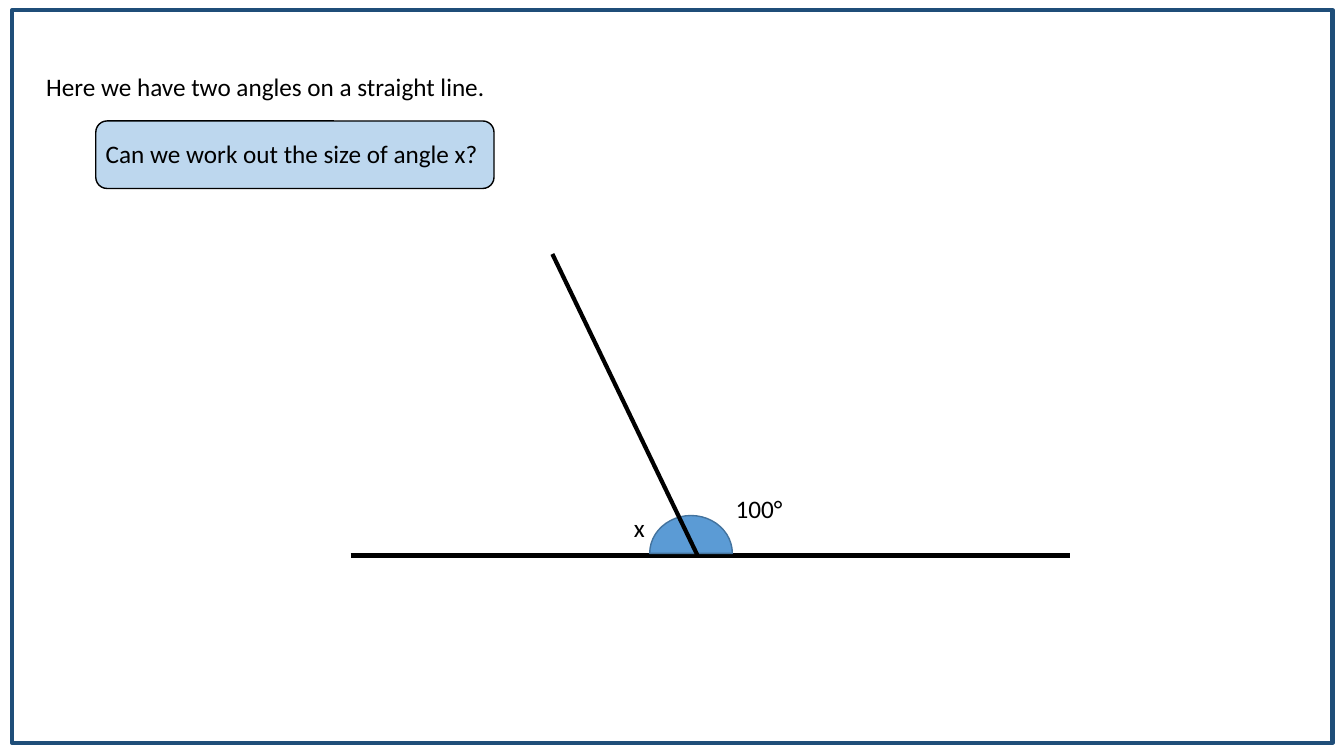
from dataclasses import dataclass

from lxml import etree
from pptx import Presentation
from pptx.dml.color import RGBColor
from pptx.enum.shapes import MSO_CONNECTOR, MSO_SHAPE
from pptx.oxml.ns import qn
from pptx.slide import Slide
from pptx.util import Inches, Pt

RECTANGLE = MSO_SHAPE.RECTANGLE
ROUNDED = MSO_SHAPE.ROUNDED_RECTANGLE
PIE = MSO_SHAPE.PIE
STRAIGHT = MSO_CONNECTOR.STRAIGHT

WIDTH, HEIGHT = Inches(13.33), Inches(7.5)
FONT = "Calibri"
TEXT_SIZE = Pt(18)
TEXT_HEIGHT = 5.33
COLOURS = {
    "ink": "000000",
    "frame": "1F4E79",
    "prompt": "BDD7EE",
    "angle": "5B9BD5",
    "angle_edge": "43739E",
}


# All positions and lengths are percentages of the slide's width or height
@dataclass(frozen=True)
class Panel:
    kind: MSO_SHAPE
    left: float
    top: float
    width: float
    height: float
    line: str
    line_points: float
    fill: str | None = None
    rotation: float = 0
    adjustments: tuple[float, ...] = ()


@dataclass(frozen=True)
class Label:
    text: str
    left: float
    top: float
    width: float
    wrap: bool = False


@dataclass(frozen=True)
class Segment:
    start: tuple[float, float]
    end: tuple[float, float]


def across(percent: float) -> int:
    return round(WIDTH * percent / 100)


def down(percent: float) -> int:
    return round(HEIGHT * percent / 100)


def colour(name: str) -> RGBColor:
    return RGBColor.from_string(COLOURS[name])


def draw_panel(slide: Slide, panel: Panel) -> None:
    shape = slide.shapes.add_shape(
        panel.kind, across(panel.left), down(panel.top),
        across(panel.width), down(panel.height))
    shape.shadow.inherit = False
    shape.rotation = panel.rotation
    for index, value in enumerate(panel.adjustments):
        shape.adjustments[index] = value
    if panel.fill:
        shape.fill.solid()
        shape.fill.fore_color.rgb = colour(panel.fill)
    else:
        shape.fill.background()
    shape.line.color.rgb = colour(panel.line)
    shape.line.width = Pt(panel.line_points)


def draw_label(slide: Slide, label: Label) -> None:
    box = slide.shapes.add_textbox(
        across(label.left), down(label.top),
        across(label.width), down(TEXT_HEIGHT))
    box.text_frame.word_wrap = label.wrap
    paragraph = box.text_frame.paragraphs[0]
    paragraph.text = label.text
    paragraph.font.name = FONT
    paragraph.font.size = TEXT_SIZE
    paragraph.font.color.rgb = colour("ink")


def draw_segment(slide: Slide, segment: Segment) -> None:
    (start_x, start_y), (end_x, end_y) = segment.start, segment.end
    connector = slide.shapes.add_connector(
        STRAIGHT, across(start_x), down(start_y), across(end_x), down(end_y))
    connector.line.color.rgb = colour("ink")
    connector.line.width = Pt(3)
    etree.SubElement(connector._element.spPr, qn("a:effectLst"))


BASELINE = 73.47
FRAME = Panel(RECTANGLE, 0.9, 1.33, 98.25, 96.93, "frame", 3)
# A half disc from 90 to 270 degrees, turned to sit on the baseline
ANGLE = Panel(PIE, 48.6, 67.73, 5.63, 10.93, "angle_edge", 1, "angle",
              rotation=90, adjustments=(54, 162))
PROMPT = Panel(ROUNDED, 7.13, 16, 29.63, 8.93, "ink", 1, "prompt")
STRAIGHT_LINE = Segment((26.1, BASELINE), (79.65, BASELINE))
ARM = Segment((41.1, 33.6), (51.9, BASELINE))
LABELS = (
    Label("Here we have two angles on a straight line.", 2.7, 8.8, 34.5),
    Label("100°", 54, 64.53, 5.03),
    Label("x", 46.43, 67.07, 2.33),
    Label("Can we work out the size of angle x?", 7.13, 17.6, 30.08, wrap=True),
)


def main() -> None:
    presentation = Presentation()
    presentation.slide_width, presentation.slide_height = WIDTH, HEIGHT
    slide = presentation.slides.add_slide(presentation.slide_layouts[6])

    # Border
    draw_panel(slide, FRAME)

    # Angle diagram
    draw_segment(slide, STRAIGHT_LINE)
    draw_panel(slide, ANGLE)
    draw_segment(slide, ARM)

    # Question and labels
    draw_panel(slide, PROMPT)
    for label in LABELS:
        draw_label(slide, label)

    presentation.save("out.pptx")


if __name__ == "__main__":
    main()
